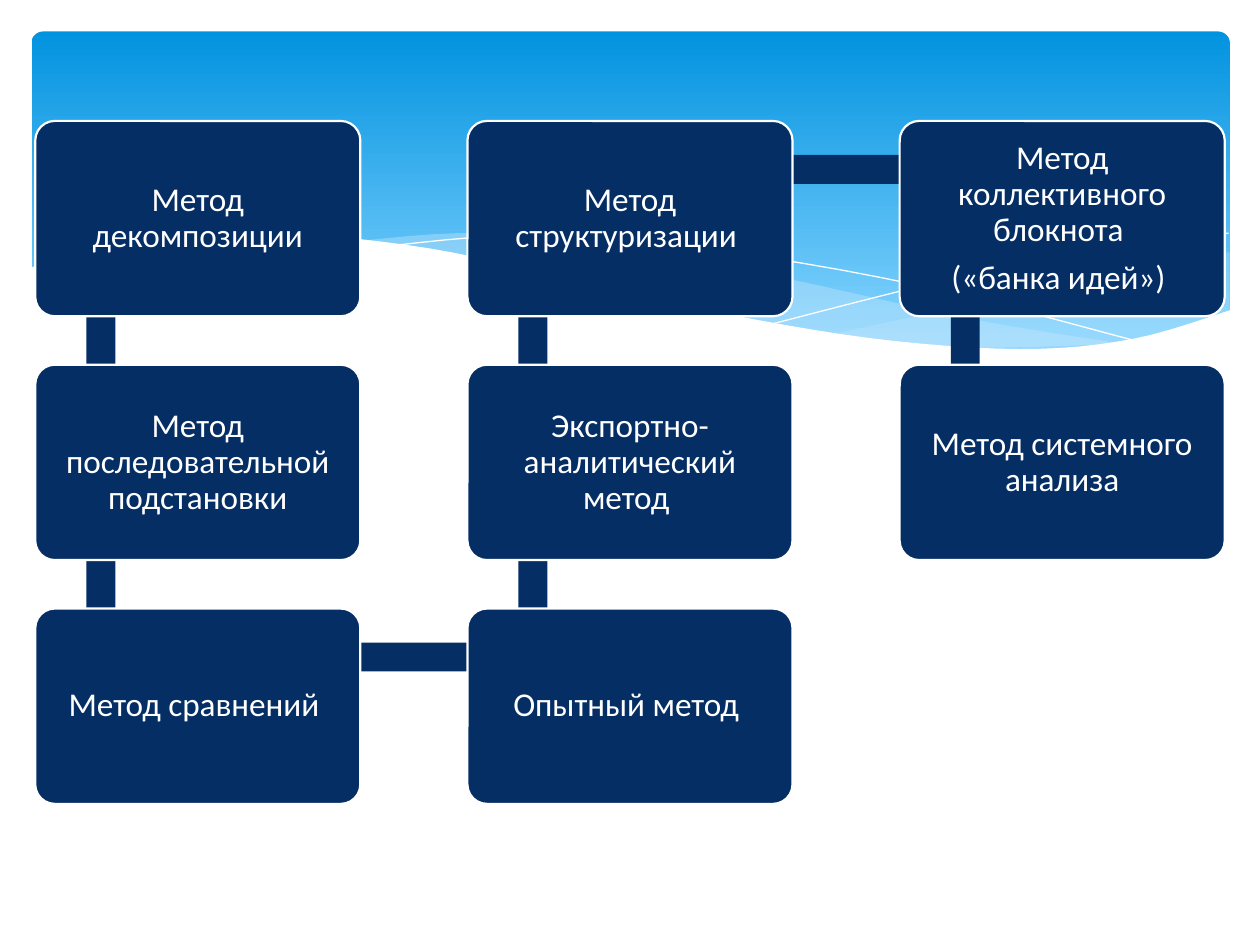
from dataclasses import dataclass
from typing import Optional

from lxml import etree
from pptx import Presentation
from pptx.dml.color import RGBColor
from pptx.enum.shapes import MSO_SHAPE
from pptx.enum.text import MSO_ANCHOR, PP_ALIGN
from pptx.oxml.ns import qn
from pptx.util import Inches, Pt

RECT = MSO_SHAPE.RECTANGLE
ROUND = MSO_SHAPE.ROUNDED_RECTANGLE
MIDDLE = MSO_ANCHOR.MIDDLE
CENTER = PP_ALIGN.CENTER

COLORS = {"navy": "052E65", "white": "FFFFFF", "top": "0293E0",
          "low": "83D3FE", "wave": "C6E7FC"}
FONT, SIZE = "Calibri", 19
LEFT, TOP = 0.28, 0.96
BOX_W, BOX_H = 2.58, 1.55
STEP_X, STEP_Y = 3.43, 1.935
BAR_H, BAR_X, BAR_Y = 0.23, 0.52, 0.385
CUTS = 6

Point = tuple[float, float]


@dataclass
class Wave:
    arcs: list[list[Point]]
    fill: Optional[str] = None
    alpha: int = 100


@dataclass
class Step:
    col: int
    row: int
    lines: list[str]


WAVES = [
    Wave([[(9.76, 2), (8.61, 2.23), (6.61, 2.65)],
          [(6.61, 2.65), (8.03, 2.78), (9.05, 2.69), (9.76, 2.47)]], "wave", 29),
    Wave([[(8.93, 2.73), (7.75, 2.54), (6.29, 2.22), (5.02, 1.96), (3.8, 1.85), (2.86, 1.91)],
          [(2.86, 1.91), (4.49, 2.22), (6.01, 2.55), (7.36, 2.75), (8.93, 2.73)]], "wave", 40),
    Wave([[(3.09, 1.95), (4.16, 1.87), (5.56, 1.97), (7.27, 2.26), (9.07, 2.72)]]),
    Wave([[(6.13, 2.57), (7.48, 2.23), (8.66, 1.99), (9.75, 1.85)]]),
    Wave([[(9.77, 2.46), (8.99, 2.69), (8.09, 2.77), (6.88, 2.68), (5.55, 2.45), (4.47, 2.2),
           (3.4, 1.97), (2.3, 1.85), (1.46, 1.85), (0.76, 1.95), (0.23, 2.13)],
          [(0.23, 3.29), (9.77, 3.29)]], "white"),
]

STEPS = [
    Step(0, 0, ["Метод декомпозиции"]),
    Step(0, 1, ["Метод последовательной подстановки"]),
    Step(0, 2, ["Метод сравнений "]),
    Step(1, 2, ["Опытный метод "]),
    Step(1, 1, ["Экспортно-аналитический метод "]),
    Step(1, 0, ["Метод структуризации "]),
    Step(2, 0, ["Метод коллективного блокнота ", "(«банка идей») "]),
    Step(2, 1, ["Метод системного анализа"]),
]


def rgb(name: str) -> RGBColor:
    return RGBColor.from_string(COLORS[name])


def paint(shape, fill: str) -> None:
    shape.shadow.inherit = False
    shape.fill.solid()
    shape.fill.fore_color.rgb = rgb(fill)
    shape.line.fill.background()


def add_sky(shapes) -> None:
    sky = shapes.add_shape(ROUND, Inches(0.25), Inches(0.25), Inches(9.51), Inches(2.7))
    sky.adjustments[0] = 0.034
    sky.shadow.inherit = False
    sky.line.fill.background()
    sky.fill.gradient()
    sky.fill.gradient_angle = 270
    for stop, name, place in zip(sky.fill.gradient_stops, ("top", "low"), (0, 0.9)):
        stop.color.rgb = rgb(name)
        stop.position = place


def blend(a: float, b: float, c: float, d: float, t: float) -> float:
    return b + t * ((c - a) + t * ((2 * a - 5 * b + 4 * c - d)
                                   + t * (3 * b - a - 3 * c + d))) / 2


def curve(arc: list[Point]) -> list[Point]:
    knots = [arc[0], *arc, arc[-1]]
    points = [tuple(blend(*axis, cut / CUTS) for axis in zip(*knots[i:i + 4]))
              for i in range(len(arc) - 1) for cut in range(CUTS)]
    return points + [arc[-1]]


def add_wave(shapes, wave: Wave) -> None:
    points = [(Inches(x), Inches(y)) for arc in wave.arcs for x, y in curve(arc)]
    pen = shapes.build_freeform(*points[0])
    pen.add_line_segments(points[1:], close=wave.fill is not None)
    shape = pen.convert_to_shape()
    if wave.fill:
        paint(shape, wave.fill)
        if wave.alpha < 100:
            tint = shape.element.spPr.find(f"{qn('a:solidFill')}/{qn('a:srgbClr')}")
            etree.SubElement(tint, qn("a:alpha")).set("val", str(wave.alpha * 1000))
    else:
        shape.shadow.inherit = False
        shape.fill.background()
        shape.line.color.rgb = rgb("white")
        shape.line.width = Pt(0)


def spot(step: Step) -> Point:
    return LEFT + step.col * STEP_X, TOP + step.row * STEP_Y


def add_bar(shapes, step: Step, after: Step) -> None:
    (x, y), (x2, y2) = spot(step), spot(after)
    size = abs(x2 - x) + abs(y2 - y) - 0.01
    mid_x, mid_y = (x + x2) / 2 + BAR_X, (y + y2) / 2 + BAR_Y
    bar = shapes.add_shape(RECT, Inches(mid_x - size / 2), Inches(mid_y - BAR_H / 2),
                           Inches(size), Inches(BAR_H))
    if x == x2:
        bar.rotation = 90 if y2 > y else 270
    paint(bar, "navy")


def add_box(shapes, step: Step) -> None:
    x, y = spot(step)
    box = shapes.add_shape(ROUND, Inches(x), Inches(y), Inches(BOX_W), Inches(BOX_H))
    box.adjustments[0] = 0.1
    paint(box, "navy")
    box.line.color.rgb = rgb("white")
    box.line.width = Pt(1.25)
    frame = box.text_frame
    frame.word_wrap = True
    frame.vertical_anchor = MIDDLE
    frame.margin_left = frame.margin_right = Inches(0.12)
    frame.margin_top = frame.margin_bottom = Inches(0.12)
    for i, line in enumerate(step.lines):
        para = frame.add_paragraph() if i else frame.paragraphs[0]
        para.alignment = CENTER
        para.line_spacing = 0.9
        para.space_after = Pt(SIZE * 0.35)
        run = para.add_run()
        run.text = line
        run.font.name = FONT
        run.font.size = Pt(SIZE)
        run.font.color.rgb = rgb("white")


def main() -> None:
    deck = Presentation()
    deck.slide_width, deck.slide_height = Inches(10), Inches(7.5)
    shapes = deck.slides.add_slide(deck.slide_layouts[6]).shapes
    add_sky(shapes)
    for wave in WAVES:
        add_wave(shapes, wave)
    for step, after in zip(STEPS, STEPS[1:] + [None]):
        if after:
            add_bar(shapes, step, after)
        add_box(shapes, step)
    deck.save("out.pptx")


if __name__ == "__main__":
    main()
